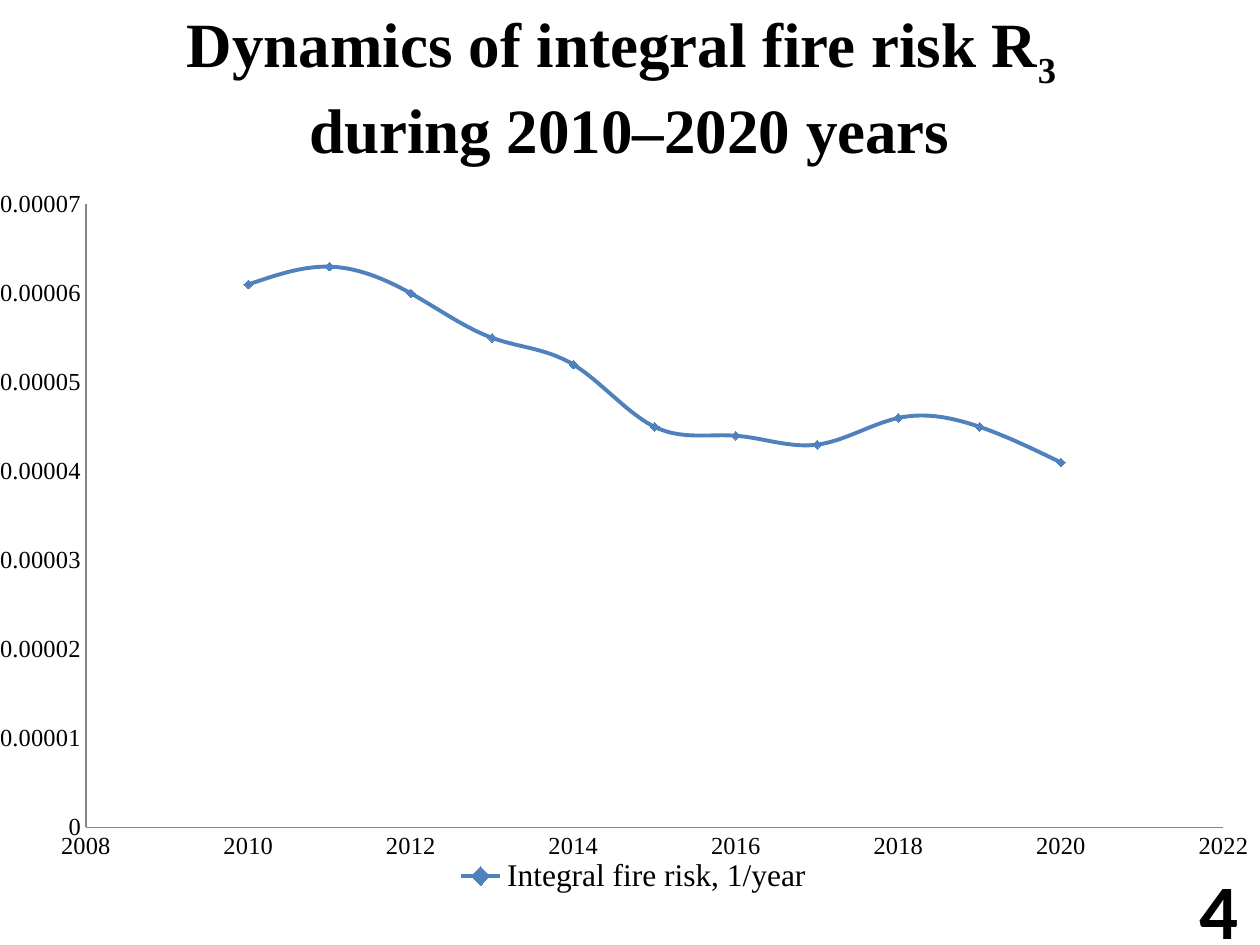
from dataclasses import dataclass

from lxml import etree
from pptx import Presentation
from pptx.chart.chart import Chart
from pptx.chart.data import XyChartData
from pptx.dml.color import RGBColor
from pptx.enum.chart import (
    XL_CHART_TYPE,
    XL_LEGEND_POSITION,
    XL_MARKER_STYLE,
    XL_TICK_MARK,
)
from pptx.enum.text import MSO_ANCHOR, PP_ALIGN
from pptx.oxml.ns import qn
from pptx.slide import Slide
from pptx.text.text import Font, _Paragraph
from pptx.util import Inches, Pt

COLORS = {"text": "000000", "series": "4F81BD", "axis": "868686"}
SERIF = "Times New Roman"
SANS = "Calibri"
FIRST_YEAR = 2010
RISKS = [6.1e-5, 6.3e-5, 6e-5, 5.5e-5, 5.2e-5, 4.5e-5,
         4.4e-5, 4.3e-5, 4.6e-5, 4.5e-5, 4.1e-5]
PLOT_LAYOUT = {"layoutTarget": "inner", "xMode": "edge", "yMode": "edge",
               "x": 0.066, "y": 0.078, "w": 0.905, "h": 0.816}
LEGEND_LAYOUT = {"xMode": "edge", "yMode": "edge", "x": 0.356, "y": 0.927}


@dataclass
class Box:
    left: float
    top: float
    width: float
    height: float

    def lengths(self) -> list[Inches]:
        return [Inches(n) for n in (self.left, self.top, self.width, self.height)]


@dataclass
class AxisScale:
    minimum: float
    maximum: float
    step: float


def rgb(name: str) -> RGBColor:
    return RGBColor.from_string(COLORS[name])


def style_font(font: Font, name: str, size: float, bold: bool = False) -> None:
    font.name = name
    font.size = Pt(size)
    font.bold = bold
    font.color.rgb = rgb("text")


def add_centered_text(slide: Slide, box: Box, font_name: str, size: float) -> _Paragraph:
    """Add a text box and return its bold, centred first paragraph."""
    frame = slide.shapes.add_textbox(*box.lengths()).text_frame
    frame.word_wrap = True
    frame.vertical_anchor = MSO_ANCHOR.MIDDLE
    paragraph = frame.paragraphs[0]
    paragraph.alignment = PP_ALIGN.CENTER
    style_font(paragraph.font, font_name, size, bold=True)
    return paragraph


def add_title(slide: Slide) -> None:
    paragraph = add_centered_text(slide, Box(0.27, 0.21, 9.45, 0.94), SERIF, 36)
    paragraph.add_run().text = "Dynamics of integral fire risk R"
    subscript = paragraph.add_run()
    subscript.text = "3"
    subscript.font._element.set("baseline", "-25000")
    paragraph.add_run().text = " "
    paragraph.add_line_break()
    paragraph.add_run().text = "during 2010–2020 years"


def style_axis(axis, scale: AxisScale) -> None:
    axis.minimum_scale = scale.minimum
    axis.maximum_scale = scale.maximum
    axis.major_unit = scale.step
    axis.has_major_gridlines = False
    axis.has_title = False
    axis.major_tick_mark = XL_TICK_MARK.NONE
    axis.minor_tick_mark = XL_TICK_MARK.NONE
    axis.tick_labels.number_format = "General"
    axis.tick_labels.number_format_is_linked = False
    style_font(axis.tick_labels.font, SERIF, 14)
    axis.format.line.color.rgb = rgb("axis")
    axis.format.line.width = Pt(0.75)


def set_layout(parent, position: int, settings: dict) -> None:
    """Place a chart part by fractions of the chart frame."""
    layout = parent.find(qn("c:layout"))
    if layout is None:
        layout = etree.Element(qn("c:layout"))
        parent.insert(position, layout)
    for child in list(layout):
        layout.remove(child)
    manual = etree.SubElement(layout, qn("c:manualLayout"))
    for tag, value in settings.items():
        etree.SubElement(manual, qn(f"c:{tag}")).set("val", str(value))


def style_legend(chart: Chart) -> None:
    chart.has_legend = True
    chart.legend.position = XL_LEGEND_POSITION.BOTTOM
    chart.legend.include_in_layout = False
    style_font(chart.legend.font, SERIF, 18)
    set_layout(chart.legend._element, 1, LEGEND_LAYOUT)


def style_series(series) -> None:
    series._element.find(qn("c:smooth")).set("val", "1")
    series.format.line.color.rgb = rgb("series")
    series.format.line.width = Pt(2.25)
    series.marker.style = XL_MARKER_STYLE.DIAMOND
    series.marker.size = 5
    series.marker.format.fill.solid()
    series.marker.format.fill.fore_color.rgb = rgb("series")
    series.marker.format.line.color.rgb = rgb("series")


def add_risk_chart(slide: Slide) -> None:
    data = XyChartData()
    points = data.add_series("Integral fire risk, 1/year")
    for year, risk in enumerate(RISKS, start=FIRST_YEAR):
        points.add_data_point(year, risk)
    chart = slide.shapes.add_chart(
        XL_CHART_TYPE.XY_SCATTER_SMOOTH, *Box(0, 1.15, 10, 6.06).lengths(), data
    ).chart
    style_font(chart.font, SANS, 10)
    chart.has_title = False
    chart.plots[0].vary_by_categories = False
    set_layout(chart._chartSpace.chart.plotArea, 0, PLOT_LAYOUT)
    style_axis(chart.category_axis, AxisScale(2008, 2022, 2))
    style_axis(chart.value_axis, AxisScale(0, 7e-5, 1e-5))
    style_legend(chart)
    style_series(chart.plots[0].series[0])


def main() -> None:
    presentation = Presentation()
    presentation.slide_width = Inches(10)
    presentation.slide_height = Inches(7.5)
    slide = presentation.slides.add_slide(presentation.slide_layouts[6])
    add_title(slide)
    page_number = add_centered_text(slide, Box(9.36, 6.82, 0.63, 0.78), SANS, 44)
    page_number.add_run().text = "4"
    add_risk_chart(slide)
    presentation.save("out.pptx")


if __name__ == "__main__":
    main()
